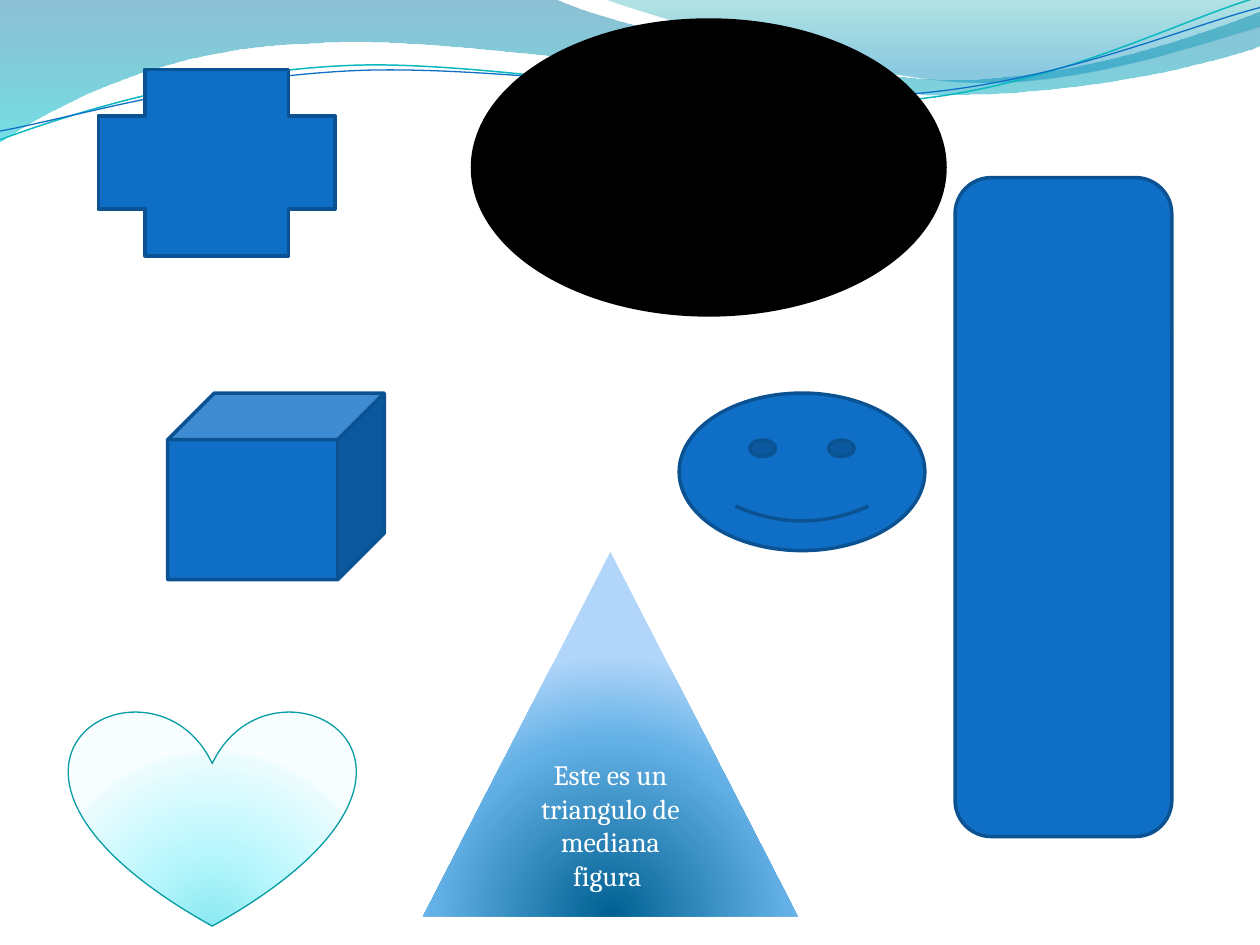
from math import cos, radians, sin

from lxml import etree
from pptx import Presentation
from pptx.dml.color import RGBColor
from pptx.enum.shapes import MSO_SHAPE as Shape
from pptx.enum.text import MSO_ANCHOR as Anchor, PP_ALIGN as Align
from pptx.oxml.ns import qn
from pptx.util import Inches, Pt

BLUE = RGBColor(0x0F, 0x6F, 0xC6)
NAVY = RGBColor(0x0B, 0x52, 0x92)
BLACK = RGBColor(0, 0, 0)
WHITE = RGBColor(0xFF, 0xFF, 0xFF)
AQUA = RGBColor(0x0A, 0xB8, 0xBF)
TEAL = RGBColor(0x06, 0x9C, 0xA3)
DEEP_BLUE = RGBColor(0x00, 0x74, 0xA1)
TURQUOISE = RGBColor(0x00, 0xC6, 0xCF)
SEA_GREEN = RGBColor(0x00, 0xA1, 0xA9)
SEA_BLUE = RGBColor(0x00, 0x8B, 0xBF)
HEART_STOPS = [(0, RGBColor(0x8B, 0xE9, 0xF1), 100), (43, RGBColor(0xB9, 0xF7, 0xFD), 100),
               (93, RGBColor(0xEA, 0xFC, 0xFE), 100), (100, RGBColor(0xF8, 0xFE, 0xFF), 100)]
TRIANGLE_STOPS = [(0, RGBColor(0x00, 0x60, 0x91), 100), (68, RGBColor(0x64, 0xB1, 0xE7), 100),
                  (100, RGBColor(0xB1, 0xD6, 0xF9), 100)]


def fill_gradient(shape, stops, radial=False):
    shape.fill.gradient()
    gradient = shape._element.spPr.find(qn("a:gradFill"))
    for child in list(gradient):
        gradient.remove(child)
    stop_list = etree.SubElement(gradient, qn("a:gsLst"))
    for position, color, opacity in stops:
        stop = etree.SubElement(stop_list, qn("a:gs"), pos=str(position * 1000))
        tint = etree.SubElement(stop, qn("a:srgbClr"), val=str(color))
        if opacity < 100:
            etree.SubElement(tint, qn("a:alpha"), val=str(opacity * 1000))
    if radial:
        circle = etree.SubElement(gradient, qn("a:path"), path="circle")
        etree.SubElement(circle, qn("a:fillToRect"), l="50000", t="130000", r="50000", b="-30000")
    else:
        etree.SubElement(gradient, qn("a:lin"), ang="5400000", scaled="1")


def write_text(shape, text, size=16, font="Cambria", color=WHITE):
    frame = shape.text_frame
    frame.word_wrap = True
    frame.vertical_anchor = Anchor.MIDDLE
    para = frame.paragraphs[0]
    para.alignment = Align.CENTER
    span = para.add_run()
    span.text = text
    span.font.size = Pt(size)
    span.font.name = font
    span.font.color.rgb = color


deck = Presentation()
deck.slide_width, deck.slide_height = Inches(10), Inches(7.5)
page = deck.slides.add_slide(deck.slide_layouts[6])

waves = [
    ((-0.01, -0.01, 10.02, 1.14), 0,
     [(0, 0), (4.4, -0.01), (4.76, 0.17, 6.64, 0.63, 7.58, 0.63),
      (8.53, 0.63, 9.58, 0.26, 10, 0.09), (10.01, 0.36),
      (9.83, 0.44, 8.7, 0.76, 7.46, 0.75), (6.22, 0.75, 3.82, 0.28, 2.57, 0.34),
      (1.29, 0.36, 0.46, 0.83, -0.01, 1.13), (0, 0)],
     [(0, DEEP_BLUE, 45), (100, TURQUOISE, 55)], None, 0),
    ((4.79, -0.01, 5.21, 0.7), 0,
     [(4.79, -0.01), (5.09, 0.11, 6.82, 0.62, 7.69, 0.65),
      (8.56, 0.69, 9.61, 0.32, 10, 0.21), (10, 0), (4.79, -0.01)],
     [(0, SEA_GREEN, 30), (80, SEA_BLUE, 45)], None, 0),
    ((-0.02, 0.22, 10.02, 0.71), -2.7,
     [(0, 1.11), (0.48, 0.93, 1.58, 0.57, 2.77, 0.52),
      (3.95, 0.47, 5.93, 0.89, 7.13, 0.8), (8.33, 0.71, 9.38, 0.15, 9.98, -0.02)],
     None, AQUA, 0.85),
    ((-0.02, 0.3, 10.03, 0.58), -2.7,
     [(0, 1.04), (0.47, 0.96, 1.64, 0.61, 2.83, 0.56),
      (4.03, 0.51, 5.97, 0.84, 7.17, 0.75), (8.36, 0.67, 9.41, 0.21, 10, 0.06)],
     None, BLUE, 0.75),
]
for (left, top, width, height), angle, segments, stops, line_color, line_width in waves:
    builder = page.shapes.build_freeform(Inches(left), Inches(top))
    builder.add_line_segments([(Inches(left + width), Inches(top + height))], close=False)
    wave = builder.convert_to_shape()
    wave.shadow.inherit = False
    wave.rotation = angle
    outline = wave._element.spPr.find(".//" + qn("a:path"))
    for child in list(outline):
        outline.remove(child)
    cosine, sine = cos(radians(-angle)), sin(radians(-angle))
    for index, segment in enumerate(segments):
        tag = "a:moveTo" if index == 0 else "a:lnTo" if len(segment) == 2 else "a:cubicBezTo"
        command = etree.SubElement(outline, qn(tag))
        for x, y in zip(segment[::2], segment[1::2]):
            across, down = x - left - width / 2, y - top - height / 2
            local_x = across * cosine - down * sine + width / 2
            local_y = across * sine + down * cosine + height / 2
            etree.SubElement(command, qn("a:pt"), x=str(Inches(local_x)), y=str(Inches(local_y)))
    if stops:
        etree.SubElement(outline, qn("a:close"))
        fill_gradient(wave, stops)
        wave.line.fill.background()
    else:
        wave.fill.background()
        wave.line.color.rgb = line_color
        wave.line.width = Pt(line_width)

figures = [
    (Shape.FLOWCHART_OR, (3.75, 0.16, 3.75, 2.34), BLACK, BLACK, 2),
    (Shape.ROUNDED_RECTANGLE, (7.58, 1.41, 1.72, 5.23), BLUE, NAVY, 2),
    (Shape.HEART, (0.55, 5.63, 2.27, 1.72), HEART_STOPS, TEAL, 0.75),
    (Shape.ISOSCELES_TRIANGLE, (3.36, 4.38, 2.97, 2.89), TRIANGLE_STOPS, None, 0),
    (Shape.CROSS, (0.78, 0.55, 1.88, 1.48), BLUE, NAVY, 2),
    (Shape.SMILEY_FACE, (5.39, 3.12, 1.95, 1.25), BLUE, NAVY, 2),
    (Shape.CUBE, (1.33, 3.12, 1.72, 1.48), BLUE, NAVY, 2),
]
for kind, bounds, paint, line_color, line_width in figures:
    figure = page.shapes.add_shape(kind, *[Inches(value) for value in bounds])
    figure.shadow.inherit = False
    if isinstance(paint, list):
        fill_gradient(figure, paint, radial=True)
    else:
        figure.fill.solid()
        figure.fill.fore_color.rgb = paint
    if line_color is None:
        figure.line.fill.background()
    else:
        figure.line.color.rgb = line_color
        figure.line.width = Pt(line_width)
    if kind == Shape.FLOWCHART_OR:
        figure._element.spPr.find(qn("a:xfrm")).set("flipV", "1")
    if kind == Shape.ISOSCELES_TRIANGLE:
        write_text(figure, "Este es un triangulo de mediana figura ")

deck.save("out.pptx")
